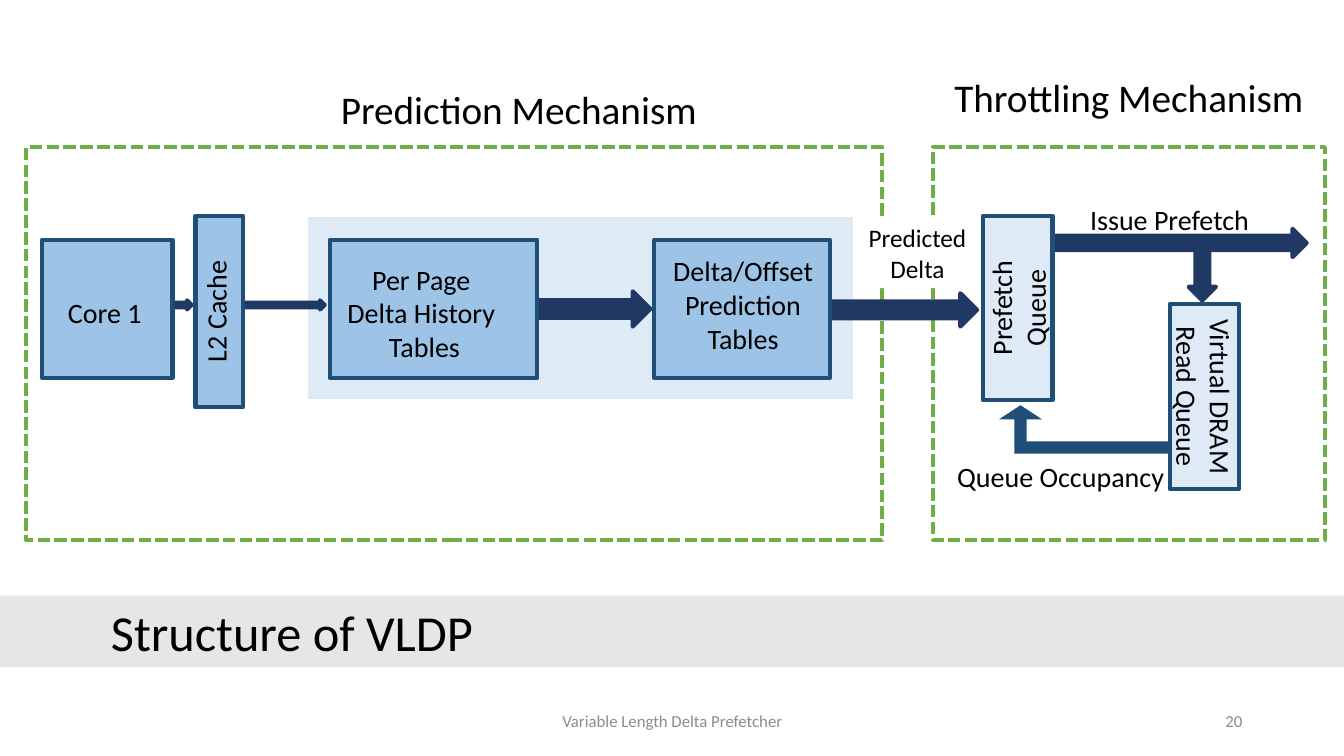
from pptx import Presentation
from pptx.dml.color import RGBColor
from pptx.enum.dml import MSO_LINE
from pptx.enum.shapes import MSO_SHAPE
from pptx.enum.text import MSO_ANCHOR, MSO_AUTO_SIZE, PP_ALIGN
from pptx.util import Inches, Pt

RECTANGLE = MSO_SHAPE.RECTANGLE
RIGHT_ARROW = MSO_SHAPE.RIGHT_ARROW
BENT_ARROW = MSO_SHAPE.BENT_UP_ARROW
DASHED = MSO_LINE.SQUARE_DOT
TOP, MIDDLE = MSO_ANCHOR.TOP, MSO_ANCHOR.MIDDLE
LEFT, CENTER, RIGHT = PP_ALIGN.LEFT, PP_ALIGN.CENTER, PP_ALIGN.RIGHT

FONT = "Calibri"
COLORS = {
    "white": "FFFFFF", "black": "000000", "gray": "8C8C8C", "band": "E7E6E6",
    "green": "70AD47", "navy": "203864", "blue": "1F4E79",
    "mid": "9DC3E6", "pale": "DEEBF7",
}

# The slide is a grid of square cells; boxes are (column, row, columns, rows)
COLUMNS, ROWS = 133.3, 75
CELL = Inches(0.1)
SLIDE = (0, 0, COLUMNS, ROWS)
PREDICTION = (2.6, 14.6, 84.9, 39)
THROTTLING = (92.5, 14.6, 38.9, 39)
TITLE_BAND = (0, 59.1, COLUMNS, 7.1)
STAGE_ROW, STAGE_ROWS = 9.2, 13.7


def color(name):
    return RGBColor.from_string(COLORS[name])


def frame(region, box):
    """Turn a box inside a region into left, top, width and height."""
    column, row, columns, rows = box
    cells = (region[0] + column, region[1] + row, columns, rows)
    return [round(value * CELL) for value in cells]


def write_text(shape, text, size=20, fill="black", align=CENTER, anchor=MIDDLE, wrap=True):
    text_frame = shape.text_frame
    text_frame.text = text
    text_frame.word_wrap = wrap
    text_frame.auto_size = MSO_AUTO_SIZE.NONE
    text_frame.vertical_anchor = anchor
    for paragraph in text_frame.paragraphs:
        paragraph.alignment = align
        paragraph.font.name = FONT
        paragraph.font.size = Pt(size)
        paragraph.font.color.rgb = color(fill)


def add_label(slide, region, box, text, rotation=0, **text_format):
    label = slide.shapes.add_textbox(*frame(region, box))
    label.rotation = rotation
    write_text(label, text, **text_format)
    return label


def add_block(slide, region, box, fill, line=None, kind=RECTANGLE, weight=3, rotation=0):
    block = slide.shapes.add_shape(kind, *frame(region, box))
    block.shadow.inherit = False
    block.rotation = rotation
    block.fill.solid()
    block.fill.fore_color.rgb = color(fill)
    if line:
        block.line.color.rgb = color(line)
        block.line.width = Pt(weight)
    else:
        block.line.fill.background()
    return block


def add_arrow(slide, region, box, rotation=0):
    return add_block(slide, region, box, "navy", "navy", RIGHT_ARROW, rotation=rotation)


def add_panel(slide, region, heading, heading_box):
    """Dashed panel with its heading above."""
    panel = add_block(slide, region, (0, 0, *region[2:]), "white", "green")
    panel.line.dash_style = DASHED
    add_label(slide, region, heading_box, heading, size=28, anchor=TOP)


def add_title(slide, region):
    title = slide.shapes.title
    title.left, title.top, title.width, title.height = frame(region, (0, 0, *region[2:]))
    title.fill.solid()
    title.fill.fore_color.rgb = color("band")
    write_text(title, "Structure of VLDP", size=36, align=LEFT, anchor=TOP)
    title.text_frame.margin_left = 11 * CELL


def add_throttling(slide, region):
    add_panel(slide, region, "Throttling Mechanism", (0, -7.8, 38.9, 5.7))

    # Prefetches leave the queue and branch down to the read queue
    add_arrow(slide, region, (12.1, 8.1, 25, 2.8))
    queues = [
        ((-0.7, 12.5, 18.3, 6.9), 270, "Prefetch Queue"),
        ((17.8, 21.3, 18.3, 6.9), 90, "Virtual DRAM Read Queue"),
    ]
    for box, rotation, text in queues:
        queue = add_block(slide, region, box, "pale", "blue", rotation=rotation)
        write_text(queue, text)
    add_arrow(slide, region, (24.2, 11.3, 5.1, 2.7), rotation=90)
    add_label(slide, region, (12.7, 5, 21.6, 4.3), "Issue Prefetch")

    # Occupancy feedback
    feedback = add_block(slide, region, (6.6, 25.6, 17, 4.8), "blue", kind=BENT_ARROW)
    feedback.element.spPr.xfrm.set("flipH", "1")
    for index, share in enumerate((0.25, 0.442, 0.291)):
        feedback.adjustments[index] = share
    add_label(slide, region, (0, 30.5, 25.4, 4.3), "Queue Occupancy")


def add_prediction(slide, region):
    add_panel(slide, region, "Prediction Mechanism", (29.4, -6.6, 38.9, 5.7))

    # Backdrop of the tables and arrows between the stages
    add_block(slide, region, (27.8, 6.8, 54.4, 18.3), "pale", "white", weight=2.25)
    arrows = [
        (13.5, 15.2, 2.9, 0.9), (21.2, 15.2, 8.4, 0.9),
        (50.7, 14.3, 11.2, 3.5), (74, 14.5, 20.3, 3.3),
    ]
    for box in arrows:
        add_arrow(slide, region, box)

    # Core, cache and tables
    for column, columns in ((1.6, 12.9), (30.1, 20.6), (62.3, 17.4)):
        add_block(slide, region, (column, STAGE_ROW, columns, STAGE_ROWS), "mid", "blue")
    add_block(slide, region, (16.8, 6.8, 4.7, 19), "mid", "blue")
    add_label(slide, region, (2, 14.2, 11.6, 4.4), "Core 1", anchor=TOP)
    add_label(slide, region, (9.3, 14.1, 19, 4.4), "L2 Cache", rotation=270, anchor=TOP)
    add_label(slide, region, (30.8, 10.9, 17.4, 11.1),
              "Per Page \nDelta History \nTables", anchor=TOP, wrap=False)
    add_label(slide, region, (61.9, 10.1, 18.4, 11.1),
              "Delta/Offset Prediction Tables", anchor=TOP)

    # Result handed over to throttling
    result = add_block(slide, region, (82.5, 7, 11.8, 7), "white")
    write_text(result, "Predicted\nDelta", size=18)


def add_footer(slide, region):
    add_label(slide, region, (44.2, 69.5, 45, 4), "Variable Length Delta Prefetcher",
              size=12, fill="gray")
    add_label(slide, region, (94.2, 69.5, 30, 4), "20", size=12, fill="gray", align=RIGHT)


def main():
    presentation = Presentation()
    presentation.slide_width = round(COLUMNS * CELL)
    presentation.slide_height = ROWS * CELL
    slide = presentation.slides.add_slide(presentation.slide_layouts[5])
    add_title(slide, TITLE_BAND)
    add_throttling(slide, THROTTLING)
    add_prediction(slide, PREDICTION)
    add_footer(slide, SLIDE)
    presentation.save("out.pptx")


if __name__ == "__main__":
    main()
